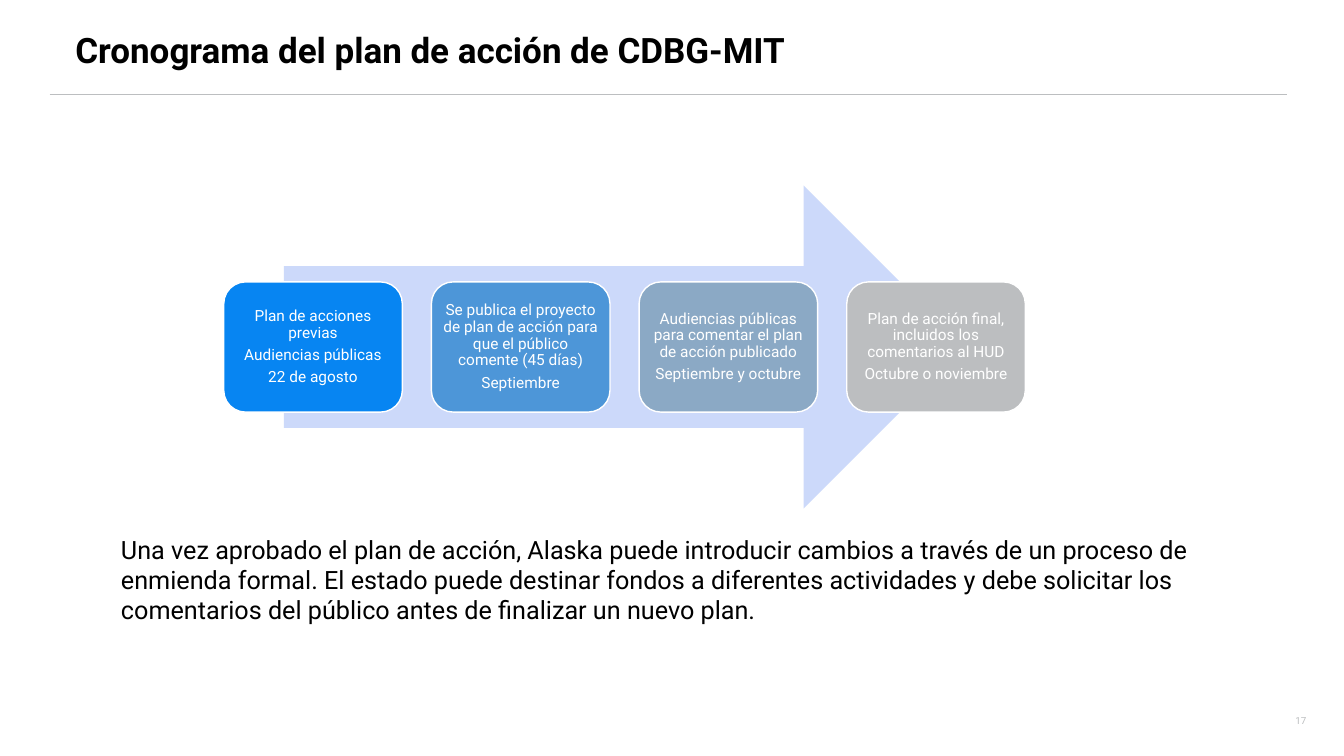
from pptx import Presentation
from pptx.dml.color import RGBColor
from pptx.enum.shapes import MSO_CONNECTOR as Connector, MSO_SHAPE as Shape
from pptx.enum.text import MSO_ANCHOR as Anchor, MSO_AUTO_SIZE as AutoSize, PP_ALIGN as Align
from pptx.oxml.ns import qn
from pptx.util import Cm, Pt
from lxml.etree import SubElement

FONT = "Roboto"
BLACK, WHITE, GRAY, ARROW_BLUE = "000000", "FFFFFF", "BCBEC0", "CCD9FA"

TITLE = "Cronograma del plan de acción de CDBG-MIT"
STEPS = [
    ("0785F2", ["Plan de acciones previas", "Audiencias públicas", "22 de agosto"]),
    ("4D96D8", ["Se publica el proyecto de plan de acción para que el público comente (45 días)",
                "Septiembre"]),
    ("8BA9C5", ["Audiencias públicas para comentar el plan de acción publicado",
                "Septiembre y octubre"]),
    (GRAY, ["Plan de acción final, incluidos los comentarios al HUD", "Octubre o noviembre"]),
]
CLOSING = (
    "Una vez aprobado el plan de acción, Alaska puede introducir cambios a través de un proceso de "
    "enmienda formal. El estado puede destinar fondos a diferentes actividades y debe solicitar los "
    "comentarios del público antes de finalizar un nuevo plan."
)


def color(value):
    return RGBColor.from_string(value)


def write(frame, texts, size, hue=BLACK, bold=False, align=Align.LEFT,
          anchor=Anchor.MIDDLE, spacing=1.0, gap=0):
    frame.word_wrap = True
    frame.auto_size = AutoSize.NONE
    frame.vertical_anchor = anchor
    for index, text in enumerate(texts):
        paragraph = frame.add_paragraph() if index else frame.paragraphs[0]
        paragraph.alignment = align
        paragraph.line_spacing = spacing
        paragraph.space_before = Pt(gap if index else 0)
        run = paragraph.add_run()
        run.text = text
        run.font.name = FONT
        run.font.size = Pt(size)
        run.font.bold = bold
        run.font.color.rgb = color(hue)


def add_header(slide, left, top, width, height):
    title = slide.shapes.title
    title.left, title.top = Cm(left + 0.43), Cm(top)
    title.width, title.height = Cm(29.72), Cm(height - 0.03)
    frame = title.text_frame
    frame.margin_left, frame.margin_right = Cm(0.22), Cm(0)
    write(frame, [TITLE], 25, bold=True, spacing=0.9)
    bottom = Cm(top + height)
    rule = slide.shapes.add_connector(
        Connector.STRAIGHT, Cm(left), bottom, Cm(left + width), bottom)
    rule.line.color.rgb = color(GRAY)
    rule.line.width = Pt(0.5)
    SubElement(rule._element.spPr, qn("a:effectLst"))


def add_block(slide, kind, left, top, width, height, fill):
    shape = slide.shapes.add_shape(kind, Cm(left), Cm(top), Cm(width), Cm(height))
    shape.shadow.inherit = False
    shape.fill.solid()
    shape.fill.fore_color.rgb = color(fill)
    return shape


def add_timeline(slide, left, top, width, height):
    step_width, step_height = 4.5, 3.28
    arrow_width = 17.17
    arrow = add_block(slide, Shape.RIGHT_ARROW, left + (width - arrow_width) / 2, top,
                      arrow_width, height, ARROW_BLUE)
    arrow.line.fill.background()
    pitch = (width - step_width) / (len(STEPS) - 1)
    step_top = top + (height - step_height) / 2
    for index, (fill, texts) in enumerate(STEPS):
        step = add_block(slide, Shape.ROUNDED_RECTANGLE, left + index * pitch, step_top,
                         step_width, step_height, fill)
        step.line.color.rgb = color(WHITE)
        step.line.width = Pt(1)
        frame = step.text_frame
        frame.margin_left = frame.margin_right = Cm(0.13)
        frame.margin_top = frame.margin_bottom = Cm(0.13)
        write(frame, texts, 11, WHITE, align=Align.CENTER, spacing=0.9, gap=4)


def add_text(slide, left, top, width, height, text, size, **style):
    box = slide.shapes.add_textbox(Cm(left), Cm(top), Cm(width), Cm(height))
    write(box.text_frame, [text], size, **style)


def main():
    presentation = Presentation()
    presentation.slide_width, presentation.slide_height = Cm(33.87), Cm(19.05)
    slide = presentation.slides.add_slide(presentation.slide_layouts[5])
    add_header(slide, 1.25, 0.25, 31.19, 2.14)
    add_timeline(slide, 5.64, 4.67, 20.2, 8.15)
    add_text(slide, 2.8, 13.34, 27.5, 2.57, CLOSING, 18, anchor=Anchor.TOP)
    add_text(slide, 26.47, 17.65, 6.7, 1.02, "17", 7, hue=GRAY, align=Align.RIGHT)
    presentation.save("out.pptx")


if __name__ == "__main__":
    main()
